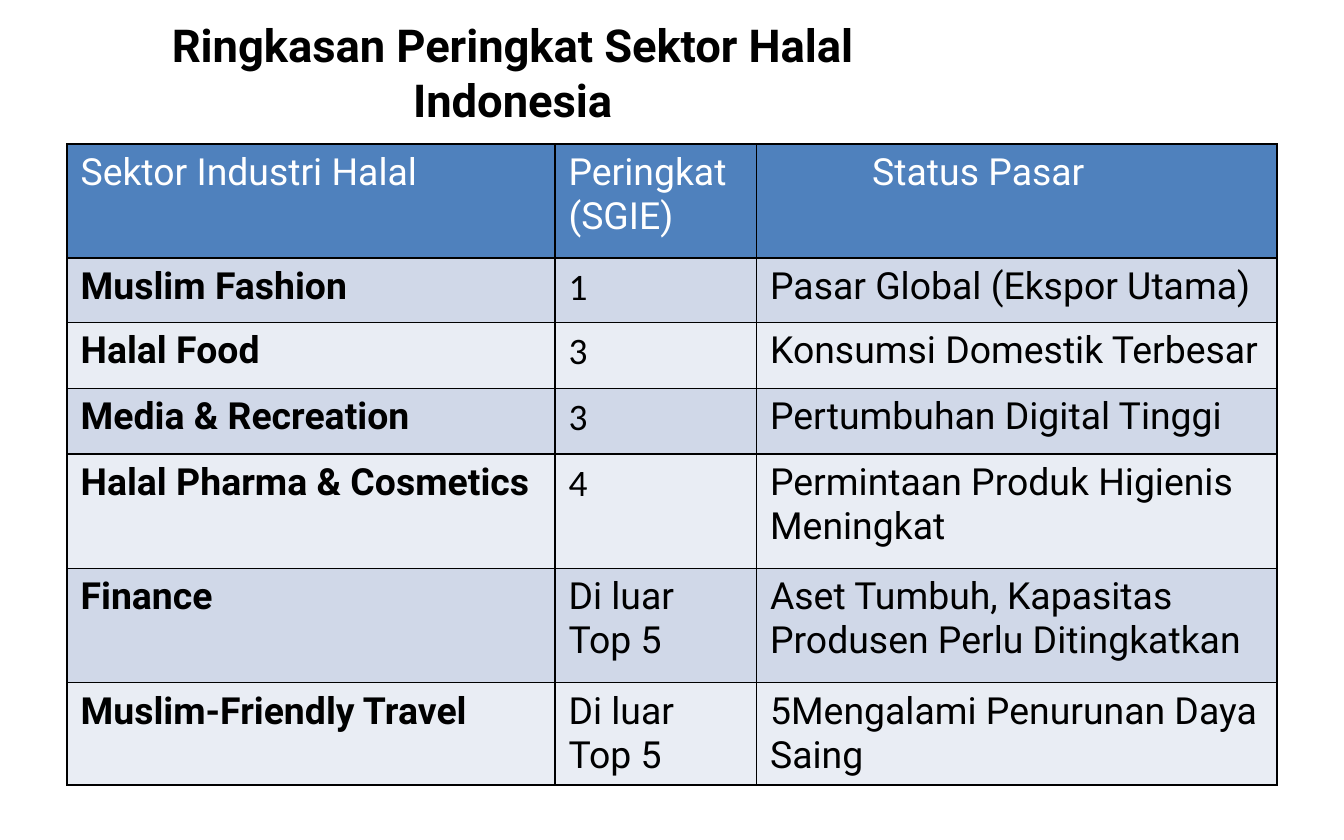
from dataclasses import dataclass

from lxml.etree import SubElement
from pptx import Presentation
from pptx.dml.color import RGBColor
from pptx.enum.text import MSO_ANCHOR, PP_ALIGN
from pptx.oxml.ns import qn
from pptx.util import Inches, Pt


@dataclass(frozen=True)
class Theme:
    text: str = "000000"
    header_text: str = "FFFFFF"
    header_fill: str = "4F81BD"
    band_fills: tuple = ("D0D8E8", "E9EDF4")
    border: str = "000000"
    border_width: float = 1
    font: str = "Roboto"
    number_font: str = "Calibri"
    title_size: float = 24.3
    table_size: float = 20


def write_text(frame, text, *, font, size, color, bold=False, align=PP_ALIGN.LEFT):
    paragraph = frame.paragraphs[0]
    paragraph.alignment = align
    run = paragraph.add_run()
    run.text = text
    run.font.name = font
    run.font.size = Pt(size)
    run.font.bold = bold
    run.font.color.rgb = RGBColor.from_string(color)


class SlideBuilder:
    def __init__(self, slide, theme):
        self.slide = slide
        self.theme = theme

    def title(self, text, left, top, width, height):
        shape = self.slide.shapes.add_textbox(
            Inches(left), Inches(top), Inches(width), Inches(height))
        frame = shape.text_frame
        frame.word_wrap = True
        # The two lines grow upward, clear of the table
        frame.vertical_anchor = MSO_ANCHOR.BOTTOM
        frame.margin_bottom = Inches(0.22)
        write_text(frame, text, font=self.theme.font, size=self.theme.title_size,
                   color=self.theme.text, bold=True, align=PP_ALIGN.CENTER)

    def table(self, rows, left, top, column_widths, row_heights):
        table = self.slide.shapes.add_table(
            len(rows), len(column_widths), Inches(left), Inches(top),
            Inches(sum(column_widths)), Inches(sum(row_heights))).table
        for column, width in zip(table.columns, column_widths):
            column.width = Inches(width)
        for row, height in zip(table.rows, row_heights):
            row.height = Inches(height)
        for row_index, values in enumerate(rows):
            for column_index, value in enumerate(values):
                self.cell(table.cell(row_index, column_index), value,
                          row_index, column_index)
        return table

    def cell(self, cell, text, row_index, column_index):
        theme = self.theme
        is_header = row_index == 0
        self.borders(cell)
        fill = theme.header_fill if is_header else theme.band_fills[(row_index - 1) % 2]
        cell.fill.solid()
        cell.fill.fore_color.rgb = RGBColor.from_string(fill)
        write_text(
            cell.text_frame, text, size=theme.table_size,
            font=theme.number_font if text.isdigit() else theme.font,
            color=theme.header_text if is_header else theme.text,
            bold=not is_header and column_index == 0,
            align=PP_ALIGN.JUSTIFY if is_header else PP_ALIGN.LEFT)

    def borders(self, cell):
        properties = cell._tc.get_or_add_tcPr()
        for side in ("a:lnL", "a:lnR", "a:lnT", "a:lnB"):
            line = SubElement(properties, qn(side), w=str(Pt(self.theme.border_width)))
            fill = SubElement(line, qn("a:solidFill"))
            SubElement(fill, qn("a:srgbClr"), val=self.theme.border)


def main():
    presentation = Presentation()
    presentation.slide_width = Inches(10)
    presentation.slide_height = Inches(6.25)
    slide = presentation.slides.add_slide(presentation.slide_layouts[6])
    builder = SlideBuilder(slide, Theme())

    # Sector ranking table
    rows = [
        ("Sektor Industri Halal", "Peringkat (SGIE)", "Status Pasar"),
        ("Muslim Fashion", "1", "Pasar Global (Ekspor Utama)"),
        ("Halal Food", "3", "Konsumsi Domestik Terbesar"),
        ("Media & Recreation", "3", "Pertumbuhan Digital Tinggi"),
        ("Halal Pharma & Cosmetics", "4", "Permintaan Produk Higienis Meningkat"),
        ("Finance", "Di luar Top 5",
         "Aset Tumbuh, Kapasitas Produsen Perlu Ditingkatkan"),
        ("Muslim-Friendly Travel", "Di luar Top 5", "5Mengalami Penurunan Daya Saing"),
    ]
    table = builder.table(rows, 0.5, 1.07, (3.63, 1.5, 3.87),
                          (0.85, 0.48, 0.49, 0.49, 0.85, 0.85, 0.76))
    # Indented last heading
    table.cell(0, 2).margin_left = Inches(0.86)

    # Title
    builder.title("Ringkasan Peringkat Sektor Halal Indonesia", 0.5, 0.53, 6.63, 0.63)

    presentation.save("out.pptx")


if __name__ == "__main__":
    main()
